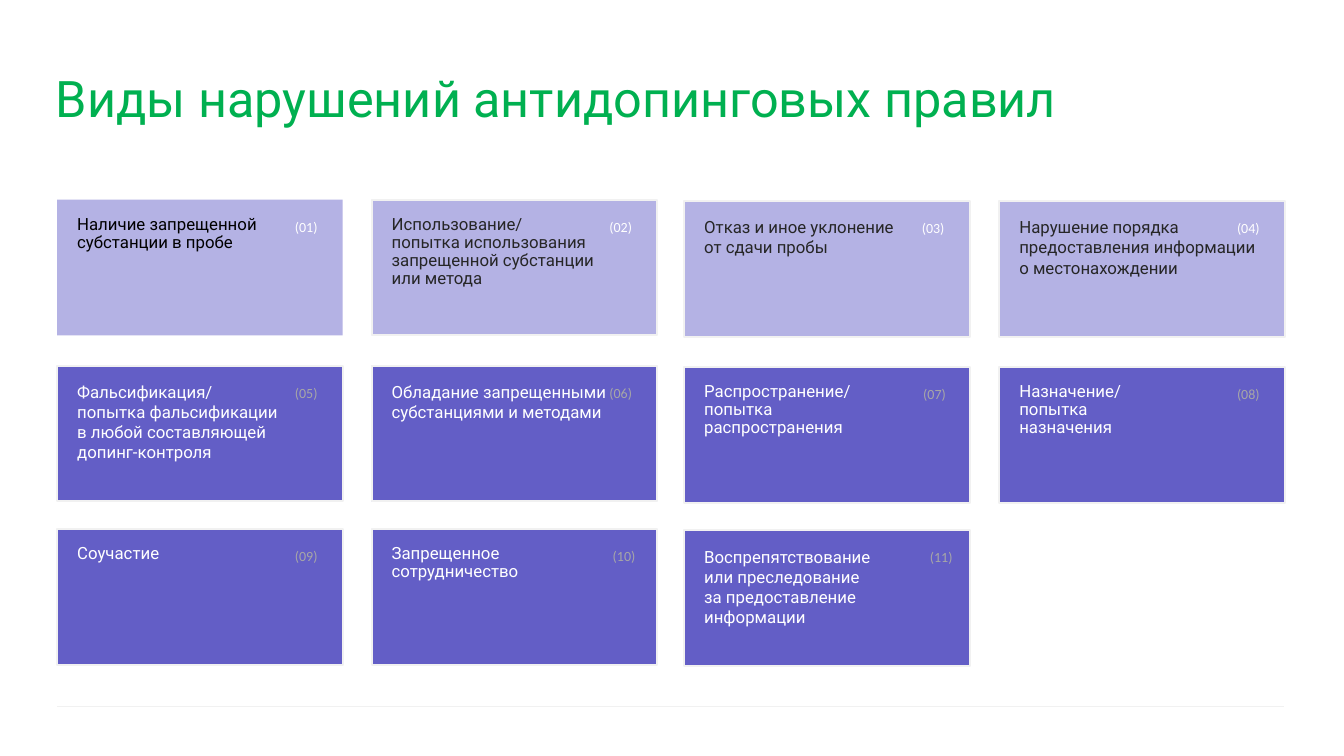
"""Build a slide that lists eleven kinds of anti-doping rule violations."""
from dataclasses import dataclass

from lxml.etree import SubElement
from pptx import Presentation
from pptx.dml.color import RGBColor
from pptx.enum.shapes import MSO_CONNECTOR, MSO_SHAPE
from pptx.enum.text import MSO_AUTO_SIZE
from pptx.oxml.ns import qn
from pptx.util import Inches, Pt


@dataclass(frozen=True)
class Theme:
    green: str = "00B050"
    pale: str = "B4B2E4"
    deep: str = "635EC6"
    edge: str = "F1F1F1"
    black: str = "000000"
    ink: str = "262626"
    white: str = "FFFFFF"
    gray: str = "A7A7A7"
    font: str = "Roboto"
    mark: str = "Calibri"
    big: int = 54
    body: int = 18
    small: int = 15


theme = Theme()
cols = (0.85, 5.53, 10.18, 14.87)
rows = (2.97, 5.44, 7.87)
wide, high = 4.25, 2.02
drop = 0.02
pad = 0.2
tag = 3.44


def tint(code):
    return RGBColor.from_string(code)


def write(place, paras, font, size, color, lead=None):
    box = slide.shapes.add_textbox(*map(Inches, place))
    frame = box.text_frame
    frame.word_wrap = True
    frame.auto_size = MSO_AUTO_SIZE.SHAPE_TO_FIT_TEXT
    for i, para in enumerate(paras):
        part = frame.add_paragraph() if i else frame.paragraphs[0]
        if lead:
            part.line_spacing = lead
        for j, line in enumerate(para.split("\n")):
            if j:
                part.add_line_break()
            run = part.add_run()
            run.text = line
            run.font.name = font
            run.font.size = Pt(size)
            run.font.color.rgb = tint(color)


deck = Presentation()
deck.slide_width, deck.slide_height = Inches(20), Inches(11.25)
slide = deck.slides.add_slide(deck.slide_layouts[6])

rule = slide.shapes.add_connector(
    MSO_CONNECTOR.STRAIGHT, *map(Inches, (cols[0], 10.51, 19.1, 10.51)))
rule.line.color.rgb = tint(theme.edge)
rule.line.width = Pt(0.5)
SubElement(rule.element.spPr, qn("a:effectLst"))

write((0.73, 1.13, 16.69, 0.83), ["Виды нарушений антидопинговых правил"],
      theme.font, theme.big, theme.green, 0.8)

cards = (
    (0, 0, 3.23, 0.65, 0.9, 0, ["Наличие запрещенной субстанции в пробе"]),
    (0, 1, 4.68, 1.31, None, 0,
     ["Фальсификация/\nпопытка фальсификации\nв любой составляющей",
      "допинг-контроля"]),
    (0, 2, 2.74, 0.37, 0.9, 0, ["Соучастие"]),
    (1, 0, 4.02, 1.19, 0.9, 0,
     ["Использование/\nпопытка использования\n"
      "запрещенной субстанции\nили метода"]),
    (1, 1, 3.52, 1.01, None, 0,
     ["Обладание запрещенными субстанциями и методами"]),
    (1, 2, 2.46, 0.65, 0.9, 0.05, ["Запрещенное\nсотрудничество"]),
    (2, 0, 3.25, 0.71, None, 0, ["Отказ и иное уклонение\nот сдачи пробы"]),
    (2, 1, 3.55, 0.92, 0.9, 0.02,
     ["Распространение/\nпопытка\nраспространения"]),
    (2, 2, 3.35, 1.31, None, 0.12,
     ["Воспрепятствование\nили преследование\n"
      "за предоставление\nинформации"]),
    (3, 0, 4.31, 1.01, None, 0,
     ["Нарушение порядка предоставления информации\nо местонахождении"]),
    (3, 1, 2.1, 0.92, 0.9, 0, ["Назначение/\nпопытка назначения"]),
)

for col, row, span, tall, lead, shift, paras in cards:
    num = row * len(cols) + col + 1
    left, top = cols[col], rows[row] + drop * (col > 1)
    card = slide.shapes.add_shape(
        MSO_SHAPE.RECTANGLE, *map(Inches, (left, top, wide, high)))
    card.shadow.inherit = False
    card.fill.solid()
    card.fill.fore_color.rgb = tint(theme.deep if row else theme.pale)
    if num == 1:
        card.line.fill.background()
    else:
        card.line.color.rgb = tint(theme.edge)
        card.line.width = Pt(2)
    ink = theme.white if row else theme.black if num == 1 else theme.ink
    write((left + pad, top + 0.19, span, tall), paras,
          theme.font, theme.body, ink, lead)
    write((left + tag + shift, top + 0.23, 0.73, 0.35), [f"({num:02})"],
          theme.mark, theme.small, theme.gray if row else theme.white)

deck.save("out.pptx")
